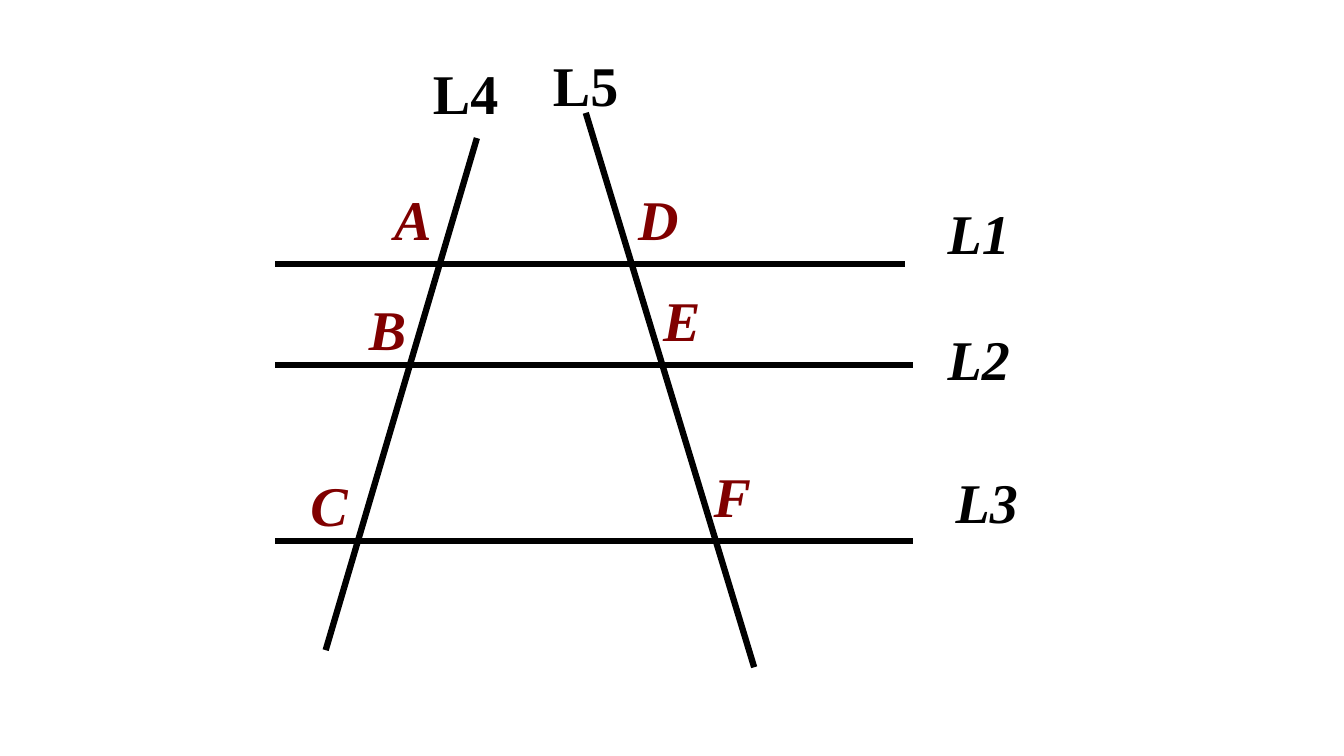
from pptx import Presentation
from pptx.dml.color import RGBColor
from pptx.enum.shapes import MSO_CONNECTOR
from pptx.enum.text import MSO_AUTO_SIZE, PP_ALIGN
from pptx.oxml.ns import qn
from pptx.util import Inches, Pt
from lxml.etree import SubElement

COLORS = {"line": "000000", "name": "000000", "point": "800000"}
FONT = "Times New Roman"
LABEL_H = 0.77

PARALLELS = [(2.17, 6.25), (3.17, 6.33), (4.92, 6.33)]
TRANSVERSALS = [(2, 0.92, 0.5, 6), (3.08, 0.67, 4.75, 6.17)]
POINTS = [
    ("A", 1.08, 1.33, 0.57), ("B", 0.83, 2.42, 0.57), ("C", 0.25, 4.17, 0.57),
    ("D", 3.5, 1.33, 0.6), ("E", 3.75, 2.33, 0.57), ("F", 4.25, 4.08, 0.57),
]
PARALLEL_NAMES = [("L1", 6.57, 1.47, 0.82), ("L2", 6.57, 2.72, 0.82), ("L3", 6.65, 4.14, 0.82)]
TRANSVERSAL_NAMES = [("L4", 1.46, 0.08, 0.85), ("L5", 2.51, 0, 0.99)]


def add_lines(s, left, top, segments):
    group = s.shapes.add_group_shape()
    for x1, y1, x2, y2 in segments:
        sp = group.shapes.add_connector(
            MSO_CONNECTOR.STRAIGHT,
            Inches(left + x1), Inches(top + y1), Inches(left + x2), Inches(top + y2))
        sp.line.color.rgb = RGBColor.from_string(COLORS["line"])
        sp.line.width = Pt(4.5)
        SubElement(sp._element.spPr, qn("a:effectLst"))


def add_labels(s, left, top, labels, color, italic=True, align=PP_ALIGN.LEFT):
    group = s.shapes.add_group_shape()
    for text, x, y, width in labels:
        sp = group.shapes.add_textbox(
            Inches(left + x), Inches(top + y), Inches(width), Inches(LABEL_H))
        tf = sp.text_frame
        tf.word_wrap = False
        tf.auto_size = MSO_AUTO_SIZE.SHAPE_TO_FIT_TEXT
        p = tf.paragraphs[0]
        p.alignment = align
        r = p.add_run()
        r.text = text
        r.font.name = FONT
        r.font.size = Pt(40)
        r.font.bold = True
        r.font.italic = italic
        r.font.color.rgb = RGBColor.from_string(COLORS[color])


def add_diagram(s, left, top):
    add_lines(s, left, top, [(0, y, length, y) for y, length in PARALLELS])
    add_lines(s, left, top, TRANSVERSALS)
    add_labels(s, left, top, POINTS, "point")
    add_labels(s, left, top, PARALLEL_NAMES, "name")
    add_labels(s, left, top, TRANSVERSAL_NAMES, "name", italic=False, align=PP_ALIGN.RIGHT)


def main():
    prs = Presentation()
    prs.slide_width, prs.slide_height = Inches(13.33), Inches(7.5)
    s = prs.slides.add_slide(prs.slide_layouts[6])
    add_diagram(s, 2.73, 0.45)
    prs.save("out.pptx")


if __name__ == "__main__":
    main()
